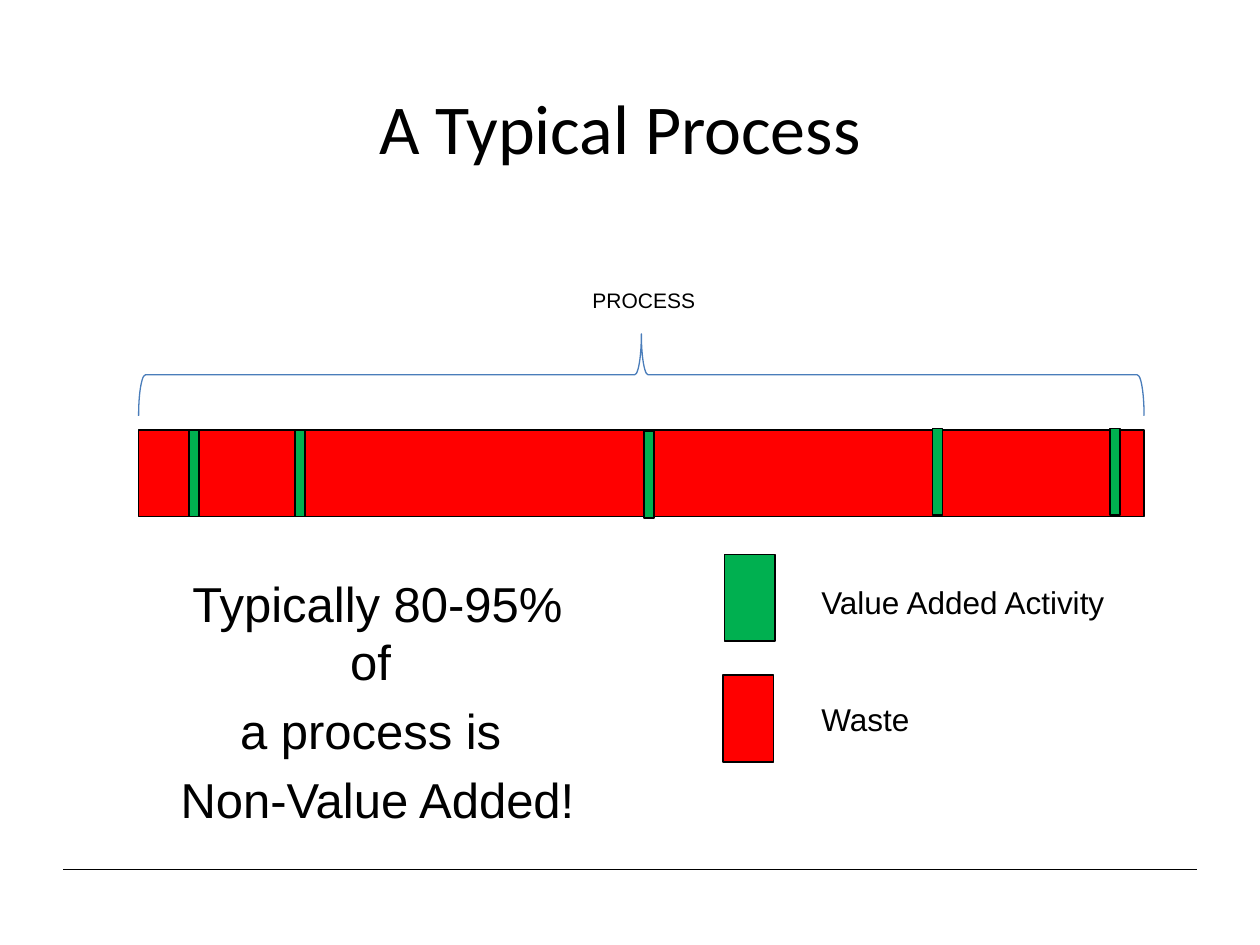
from dataclasses import dataclass

from lxml import etree
from pptx import Presentation
from pptx.dml.color import RGBColor
from pptx.enum.shapes import MSO_CONNECTOR, MSO_SHAPE
from pptx.enum.text import MSO_ANCHOR as Anchor, PP_ALIGN as Align
from pptx.oxml.ns import qn
from pptx.util import Inches, Pt

BLACK, GREEN, RED, BLUE = "000000", "00B050", "FF0000", "4A7DBA"
BAR_LEFT, BAR_TOP, BAR_W, BAR_H = 1.1, 3.41, 7.98, 0.69
STRIPE_W, SWATCH_W = 0.08, 0.4


@dataclass
class Stripe:
    left: float
    top: float = BAR_TOP


@dataclass
class LegendItem:
    label: str
    color: str
    left: float
    top: float
    label_top: float


STRIPES = [Stripe(1.5), Stripe(2.34), Stripe(5.11, 3.42), Stripe(7.4, 3.4), Stripe(8.81, 3.4)]
LEGEND = [
    LegendItem("Value Added Activity", GREEN, 5.75, 4.4, 4.58),
    LegendItem("Waste", RED, 5.74, 5.36, 5.51),
]


def rgb(color: str) -> RGBColor:
    return RGBColor.from_string(color)


def add_box(s, left: float, top: float, width: float, color: str) -> None:
    sp = s.shapes.add_shape(MSO_SHAPE.RECTANGLE, Inches(left), Inches(top),
                            Inches(width), Inches(BAR_H))
    sp.shadow.inherit = False
    sp.fill.solid()
    sp.fill.fore_color.rgb = rgb(color)
    sp.line.color.rgb = rgb(BLACK)
    sp.line.width = Pt(1)


def add_text(s, left: float, top: float, width: float, height: float, lines: list[str],
             size: float, font: str = "Arial", align: Align = Align.CENTER,
             anchor: Anchor = Anchor.TOP) -> None:
    tf = s.shapes.add_textbox(Inches(left), Inches(top), Inches(width), Inches(height)).text_frame
    tf.word_wrap = True
    tf.vertical_anchor = anchor
    for i, line in enumerate(lines):
        p = tf.add_paragraph() if i else tf.paragraphs[0]
        p.text = line
        p.alignment = align
        if i:
            p.space_before = Pt(5.6)
        p.font.size = Pt(size)
        p.font.name = font
        p.font.color.rgb = rgb(BLACK)


def add_brace(s, left: float, top: float, width: float, height: float) -> None:
    """Draw a left brace turned to point up, filling the given area."""
    sp = s.shapes.add_shape(MSO_SHAPE.LEFT_BRACE, Inches(left + (width - height) / 2),
                            Inches(top + (height - width) / 2), Inches(height), Inches(width))
    sp.rotation = 90
    sp.adjustments[0] = 0.083
    sp.shadow.inherit = False
    sp.fill.background()
    sp.line.color.rgb = rgb(BLUE)
    sp.line.width = Pt(0.75)


def add_rule(s, left: float, right: float, y: float) -> None:
    cx = s.shapes.add_connector(MSO_CONNECTOR.STRAIGHT, Inches(left), Inches(y),
                                Inches(right), Inches(y))
    cx.line.color.rgb = rgb(BLACK)
    cx.line.width = Pt(0.75)
    etree.SubElement(cx._element.spPr, qn("a:effectLst"))


def main() -> None:
    prs = Presentation()
    prs.slide_width, prs.slide_height = Inches(10), Inches(7.5)
    s = prs.slides.add_slide(prs.slide_layouts[6])

    # Footer rule and title
    add_rule(s, 0.5, 9.5, 6.9)
    add_text(s, 0.42, 0.38, 9, 1.25, ["A Typical Process"], 40, "Calibri", anchor=Anchor.MIDDLE)

    # Process bar with its brace and value-added stripes
    add_text(s, 4.04, 2.23, 2.14, 0.39, ["PROCESS"], 12)
    add_brace(s, BAR_LEFT, 2.65, BAR_W, 0.65)
    add_box(s, BAR_LEFT, BAR_TOP, BAR_W, RED)
    for stripe in STRIPES:
        add_box(s, stripe.left, stripe.top, STRIPE_W, GREEN)

    # Key message
    add_text(s, 1.25, 4.77, 3.49, 1.58,
             ["Typically 80-95% of ", "a process is ", "Non-Value Added!"], 28,
             anchor=Anchor.MIDDLE)

    # Legend
    for item in LEGEND:
        add_box(s, item.left, item.top, SWATCH_W, item.color)
        add_text(s, 6.42, item.label_top, 2.67, 0.4, [item.label], 18, align=Align.LEFT)

    prs.save("out.pptx")


if __name__ == "__main__":
    main()
